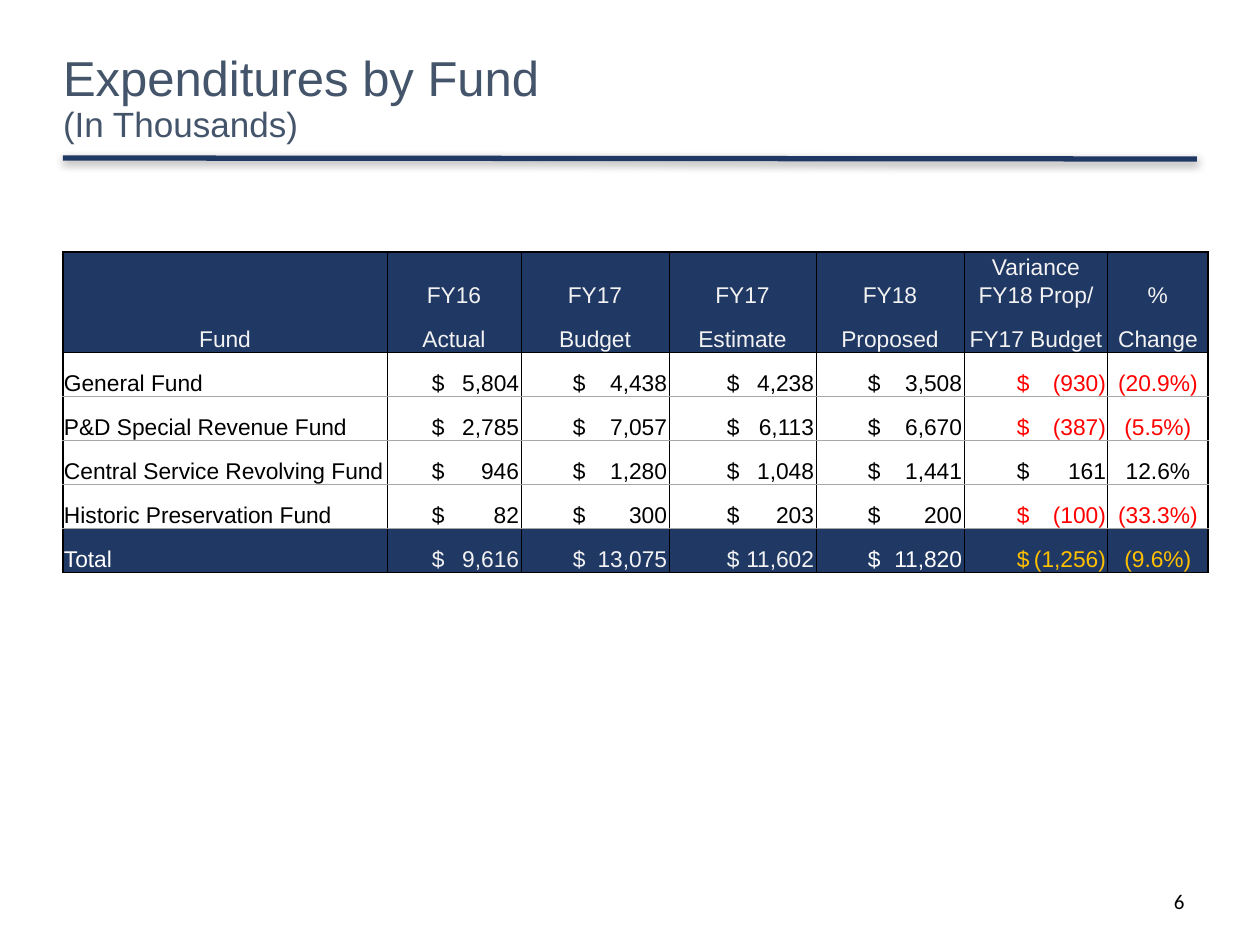
"""Build the Expenditures by Fund slide."""
from dataclasses import dataclass

from lxml import etree
from pptx import Presentation
from pptx import util as u
from pptx.dml.color import RGBColor
from pptx.enum import shapes, text
from pptx.oxml import ns

TITLE = ["Expenditures by Fund", "(In Thousands)"]
PAGE_NUMBER = "6"
HEADER = [
    ["", "", "", "", "", "Variance", ""],
    ["Fund", "FY16", "FY17", "FY17", "FY18", "FY18 Prop/", "%"],
    ["", "Actual", "Budget", "Estimate", "Proposed", "FY17 Budget", "Change"],
]
FUNDS = [
    ["General Fund", "5,804", "4,438", "4,238", "3,508", "(930)", "(20.9%)"],
    ["P&D Special Revenue Fund", "2,785", "7,057", "6,113", "6,670", "(387)", "(5.5%)"],
    ["Central Service Revolving Fund", "946", "1,280", "1,048", "1,441", "161", "12.6%"],
    ["Historic Preservation Fund", "82", "300", "203", "200", "(100)", "(33.3%)"],
    ["Total", "9,616", "13,075", "11,602", "11,820", "(1,256)", "(9.6%)"],
]
COLUMN_WIDTHS = [324, 134, 148, 147, 148, 144, 100]
ROW_HEIGHTS = [26, 27] + [44] * 6
DOLLAR_OFFSETS = {1: 44, 2: 51, 3: 57, 4: 51, 5: 52}
PX = u.Inches(1) // 126


@dataclass(frozen=True)
class Theme:
    font: str = "Arial"
    number_font: str = "Calibri"
    navy: str = "203864"
    slate: str = "44546A"
    white: str = "FFFFFF"
    pale: str = "F2F2F2"
    black: str = "000000"
    grey: str = "A6A6A6"
    red: str = "FF0000"
    gold: str = "FFC000"
    title_size: int = 28
    subtitle_size: int = 20
    table_size: int = 13
    number_size: int = 12


THEME = Theme()


def px(*lengths):
    return [length * PX for length in lengths]


def style(run, size, color, font=THEME.font):
    run.font.size = u.Pt(size)
    run.font.name = font
    run.font.color.rgb = RGBColor.from_string(color)


def add_title(slide):
    title = slide.shapes.title
    title.left, title.top, title.width, title.height = px(63, 42, 864, 115)
    frame = title.text_frame
    frame.text = "\v".join(TITLE)
    frame.auto_size = text.MSO_AUTO_SIZE.NONE
    frame.vertical_anchor = text.MSO_ANCHOR.MIDDLE
    frame.margin_left = frame.margin_right = frame.margin_top = frame.margin_bottom = 0
    heading = frame.paragraphs[0]
    heading.alignment = text.PP_ALIGN.LEFT
    heading.line_spacing = 0.9
    for run, size in zip(heading.runs, (THEME.title_size, THEME.subtitle_size)):
        style(run, size, THEME.slate)


def add_rule(slide):
    rule = slide.shapes.add_connector(shapes.MSO_CONNECTOR.STRAIGHT, *px(63, 158, 1197, 159))
    rule.line.color.rgb = RGBColor.from_string(THEME.navy)
    rule.line.width = u.Pt(3)
    effects = etree.SubElement(rule._element.spPr, ns.qn("a:effectLst"))
    shadow = etree.SubElement(effects, ns.qn("a:outerShdw"), blurRad=str(u.Pt(5)),
                              dist=str(u.Pt(1.6)), dir="5400000", rotWithShape="0")
    shade = etree.SubElement(shadow, ns.qn("a:srgbClr"), val=THEME.black)
    etree.SubElement(shade, ns.qn("a:alpha"), val="38000")


def add_page_number(slide):
    box = slide.shapes.add_textbox(*px(903, 876, 294, 50))
    frame = box.text_frame
    frame.word_wrap = True
    frame.vertical_anchor = text.MSO_ANCHOR.MIDDLE
    frame.text = PAGE_NUMBER
    frame.paragraphs[0].alignment = text.PP_ALIGN.RIGHT
    style(frame.paragraphs[0].runs[0], THEME.number_size, THEME.black, THEME.number_font)


def set_borders(cell, row, column):
    last_row, last_column = len(ROW_HEIGHTS), len(COLUMN_WIDTHS)
    header_end = len(HEADER)

    def vertical(edge):
        return THEME.black, 1 if edge in (0, last_column) else 0.5

    def horizontal(edge):
        if edge in (0, last_row):
            return THEME.black, 1
        if edge == header_end:
            return THEME.black, 0.5
        return (None, 0) if edge < header_end else (THEME.grey, 1)

    bottom = header_end if (row, column) == (1, 0) else row + 1
    edges = [("L", vertical(column)), ("R", vertical(column + 1)),
             ("T", horizontal(row)), ("B", horizontal(bottom))]
    properties = cell._tc.get_or_add_tcPr()
    for position, (side, (color, width)) in enumerate(edges):
        border = etree.Element(ns.qn(f"a:ln{side}"), w=str(u.Pt(width)))
        if color:
            fill = etree.SubElement(border, ns.qn("a:solidFill"))
            etree.SubElement(fill, ns.qn("a:srgbClr"), val=color)
        else:
            etree.SubElement(border, ns.qn("a:noFill"))
        properties.insert(position, border)


def add_money_tabs(paragraph, column):
    tabs = etree.SubElement(paragraph._p.get_or_add_pPr(), ns.qn("a:tabLst"))
    stops = [(DOLLAR_OFFSETS[column], "l"), (COLUMN_WIDTHS[column] - 3, "r")]
    for offset, side in stops:
        etree.SubElement(tabs, ns.qn("a:tab"), pos=str(offset * PX), algn=side)


def text_color(value, row, column):
    is_total = row == len(ROW_HEIGHTS) - 1
    if value.startswith("("):
        return THEME.gold if is_total else THEME.red
    if row < len(HEADER):
        return THEME.pale
    if is_total:
        return THEME.white if column in (0, 4) else THEME.pale
    return THEME.black


def fill_cell(cell, value, row, column):
    in_header = row < len(HEADER)
    is_navy = in_header or row == len(ROW_HEIGHTS) - 1
    is_money = not in_header and column in DOLLAR_OFFSETS
    cell.fill.solid()
    cell.fill.fore_color.rgb = RGBColor.from_string(THEME.navy if is_navy else THEME.white)
    cell.margin_left = cell.margin_right = cell.margin_top = PX
    cell.margin_bottom = 0
    cell.vertical_anchor = text.MSO_ANCHOR.BOTTOM
    set_borders(cell, row, column)
    paragraph = cell.text_frame.paragraphs[0]
    if not value:
        etree.SubElement(paragraph._p, ns.qn("a:endParaRPr"), sz=str(THEME.table_size * 100))
        return
    paragraph.text = f"\t$\t{value}" if is_money else value
    centred = in_header or column == len(COLUMN_WIDTHS) - 1
    paragraph.alignment = text.PP_ALIGN.CENTER if centred else text.PP_ALIGN.LEFT
    if is_money:
        add_money_tabs(paragraph, column)
    for run in paragraph.runs:
        style(run, THEME.table_size, text_color(value, row, column))


def add_fund_table(slide):
    rows = HEADER + FUNDS
    table = slide.shapes.add_table(
        len(rows), len(COLUMN_WIDTHS),
        *px(63, 252, sum(COLUMN_WIDTHS), sum(ROW_HEIGHTS))).table
    table.first_row = table.horz_banding = False
    for column, width in zip(table.columns, COLUMN_WIDTHS):
        column.width = width * PX
    for row, height in zip(table.rows, ROW_HEIGHTS):
        row.height = height * PX
    for row, values in enumerate(rows):
        for column, value in enumerate(values):
            fill_cell(table.cell(row, column), value, row, column)
    table.cell(1, 0).merge(table.cell(2, 0))


def main():
    deck = Presentation()
    deck.slide_width, deck.slide_height = px(1260, 945)
    slide = deck.slides.add_slide(deck.slide_layouts[5])
    add_rule(slide)
    add_title(slide)
    add_page_number(slide)
    add_fund_table(slide)
    deck.save("out.pptx")


if __name__ == "__main__":
    main()
